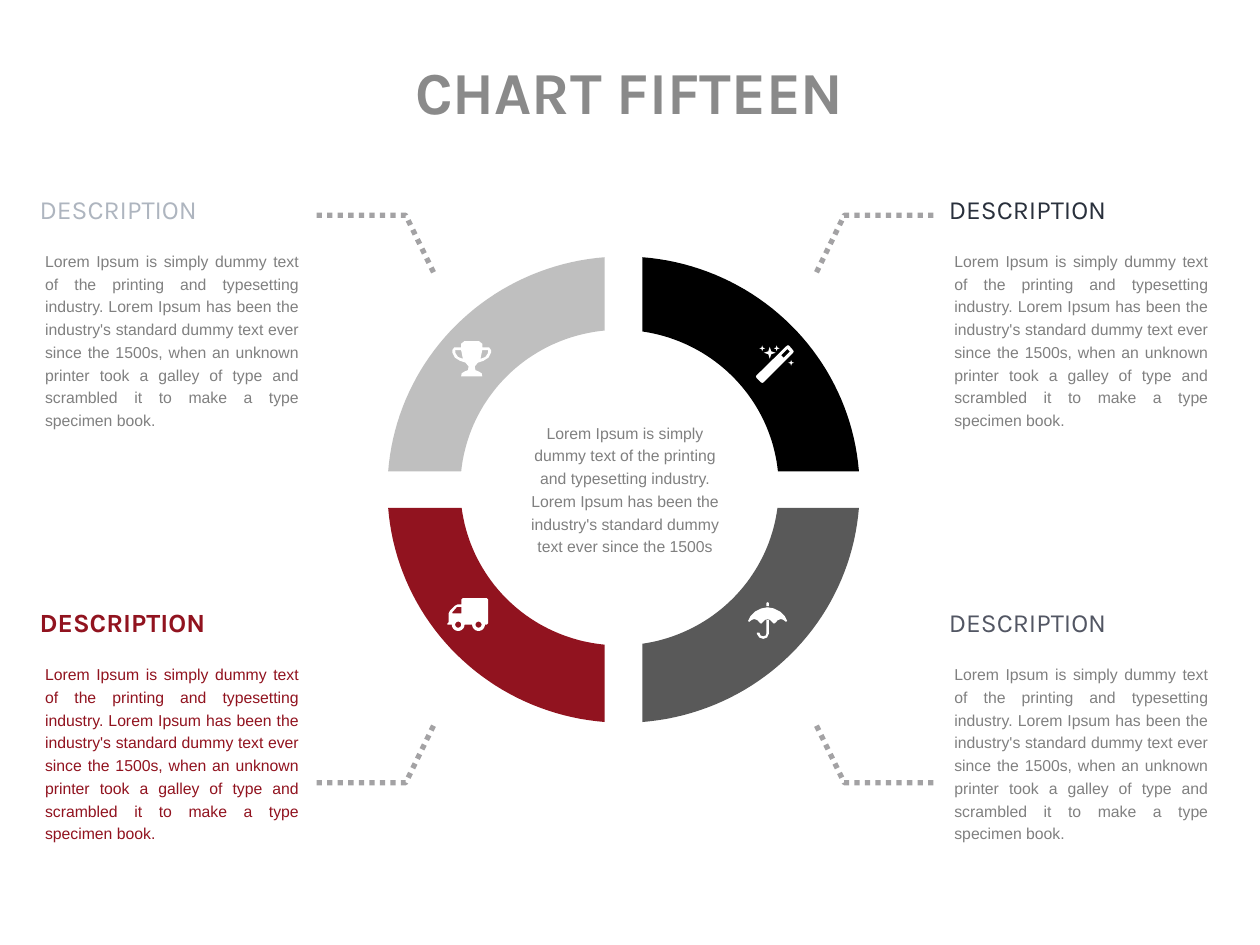
from math import acos, asin, cos, pi, sin

from pptx import Presentation
from pptx.dml.color import RGBColor
from pptx.enum.dml import MSO_LINE
from pptx.enum.text import MSO_ANCHOR, PP_ALIGN
from pptx.util import Cm, Pt

DOTS = MSO_LINE.ROUND_DOT
LEFT, MID, FULL = PP_ALIGN.LEFT, PP_ALIGN.CENTER, PP_ALIGN.JUSTIFY
TOP, CENTRE = MSO_ANCHOR.TOP, MSO_ANCHOR.MIDDLE

COLORS = {
    "title": "8A8A8A", "body": "808080", "dots": "A3A2A4", "icon": "FFFFFF",
    "silver": "BFBFBF", "black": "000000", "red": "91131F", "gray": "595959",
    "mist": "AEB5BF", "navy": "29303C", "slate": "525663",
}
INTRO = ("Lorem Ipsum is simply dummy text of the printing and typesetting "
         "industry. Lorem Ipsum has been the industry's standard dummy text "
         "ever since the 1500s")
STORY = INTRO + (", when an unknown printer took a galley of type and "
                 "scrambled it to make a type specimen book.")


def rgb(name):
    return RGBColor.from_string(COLORS[name])


def add_text(shapes, box, text, size, color, font="Arial", bold=False,
             align=LEFT, anchor=TOP, inset=0, lines=1.0, before=0):
    frame = shapes.add_textbox(*map(Cm, box)).text_frame
    frame.word_wrap = True
    frame.vertical_anchor = anchor
    frame.margin_left = frame.margin_right = Cm(inset)
    frame.margin_top = frame.margin_bottom = Cm(inset)
    frame.text = text
    para = frame.paragraphs[0]
    para.alignment = align
    para.line_spacing = lines
    para.space_before = Pt(before)
    face = para.runs[0].font
    face.name, face.size, face.bold = font, Pt(size), bold
    face.color.rgb = rgb(color)


def add_path(shapes, loops, closed=True):
    """Build one freeform from lists of points in centimetres."""
    pen = None
    for loop in loops:
        start, *rest = [(Cm(x), Cm(y)) for x, y in loop]
        if pen is None:
            pen = shapes.build_freeform(*start)
        else:
            pen.move_to(*start)
        pen.add_line_segments(rest, close=closed)
    shape = pen.convert_to_shape()
    shape.shadow.inherit = False
    return shape


def add_solid(shapes, loops, color):
    shape = add_path(shapes, loops)
    shape.fill.solid()
    shape.fill.fore_color.rgb = rgb(color)
    shape.line.fill.background()


def add_leader(shapes, hub, side, level):
    """Draw a dotted elbow; side and level are -1 or 1 from the hub."""
    steps = [(3.86, 4.57), (4.42, 5.72), (6.23, 5.72)]
    points = [(hub[0] + side * x, hub[1] + level * y) for x, y in steps]
    shape = add_path(shapes, [points], closed=False)
    shape.fill.background()
    shape.line.color.rgb = rgb("dots")
    shape.line.width = Pt(3)
    shape.line.dash_style = DOTS


def add_note(shapes, left, top, head, body, bold):
    add_text(shapes, (left, top, 4.22, 0.86), "DESCRIPTION", 15, head,
             "Karla", bold, anchor=CENTRE, lines=0.8)
    add_text(shapes, (left + 0.01, top + 1.06, 5.31, 3.99), STORY, 9, body,
             align=FULL, inset=0.1, lines=1.2, before=5)


def arc(oval, cut, side, level, count=40):
    """Points on a quarter oval, from its level cut to its upright cut."""
    x, y, wide, high = oval
    first = asin(level * (cut[1] - y) / high)
    last = acos(side * (cut[0] - x) / wide)
    turns = [first + (last - first) * i / count for i in range(count + 1)]
    return [(x + side * wide * cos(t), y + level * high * sin(t))
            for t in turns]


def add_quarter(shapes, hub, side, level, color):
    x, y = hub
    cut = (x + side * 0.38, y + level * 0.37)
    outer = arc((x, y, 4.76, 4.7), cut, side, level)
    inner = arc((x - 0.08, y - 0.04, 3.21, 3.18), cut, side, level)
    add_solid(shapes, [outer + inner[::-1]], color)


def add_icon(shapes, box, grid, loops):
    """Fit outlines drawn on a grid into a box; inner outlines are holes."""
    left, top, wide, high = box
    add_solid(shapes, [[(left + x * wide / grid[0], top + y * high / grid[1])
                        for x, y in loop] for loop in loops], "icon")


def mirror(half, axis=15.5):
    return ([(axis + x, y) for x, y in half]
            + [(axis - x, y) for x, y in reversed(half)])


def disc(x, y, size, turn=2 * pi, count=20):
    return [(x + size * cos(turn * i / count), y + size * sin(turn * i / count))
            for i in range(count + 1)]


def star(x, y, size):
    return [(x + cos(i * pi / 4) * size * (0.35 if i % 2 else 1),
             y + sin(i * pi / 4) * size * (0.35 if i % 2 else 1))
            for i in range(8)]


def add_cup(shapes, box):
    bowl = mirror([(0, 0), (6, 0), (8.5, 2), (8.5, 5), (14, 5), (15.5, 7),
                   (15.5, 9), (13.5, 13), (9.5, 15.5), (5, 17), (2.5, 20),
                   (3, 23), (5.5, 24), (8, 25.5), (8.5, 28), (0, 28)])
    grip = [(8.5, 7), (13.2, 7), (13, 9.5), (11, 12.5), (7, 14)]
    ears = [[(15.5 + side * x, y) for x, y in grip] for side in (-1, 1)]
    add_icon(shapes, box, (31, 28), [bowl, *ears])


def add_wand(shapes, box):
    stick = [(24.5, 0.5), (25.5, 0), (26.5, 0.5), (29.5, 4), (30, 5),
             (29.5, 6), (6, 29.5), (5, 30), (4, 29.5), (0.5, 26),
             (0, 25), (0.5, 24)]
    tip = [(22, 10), (27, 5), (25, 3), (20, 8)]
    stars = [star(11, 6, 4.7), star(5, 2.5, 2.3), star(16.5, 2.5, 2.3),
             star(28, 14, 2.3)]
    add_icon(shapes, box, (30, 30), [stick, tip, *stars])


def add_truck(shapes, box):
    front, back = (8.5, 21), (24.5, 21)
    shell = [(0, 21), (0, 20), (1, 19), (1, 12), (2, 10), (6, 6), (8, 5),
             (11, 5), (11, 1), (12, 0), (31, 0), (32, 1), (32, 20),
             (31, 21), *disc(*back, 5, pi), *disc(*front, 5, pi)]
    glass = [(4, 12), (11, 12), (11, 7), (7.5, 7), (4, 11)]
    add_icon(shapes, box, (32, 26),
             [shell, glass, disc(*front, 2.4), disc(*back, 2.4)])


def add_brolly(shapes, box):
    roof = mirror([(0, 4), (5, 5), (10, 7.5), (13.5, 11), (15.5, 15),
                   (14.5, 15.5), (12.5, 14), (10.5, 13.3), (8, 14.3),
                   (6, 16.5), (5, 17), (4, 16), (2, 14), (0, 13.3)])
    tip = mirror([(0, 0), (1, 0.6), (1, 3.2)])
    hook = [(14.5, 14), (16.5, 14), (16.5, 25), (15, 28), (12, 29), (9, 28),
            (7, 25), (7, 24), (9, 24), (10, 26.3), (12, 27), (14, 26.3),
            (14.5, 25)]
    add_icon(shapes, box, (31, 29), [roof, tip, hook])


def main():
    deck = Presentation()
    deck.slide_width, deck.slide_height = Cm(25.4), Cm(19.05)
    shapes = deck.slides.add_slide(deck.slide_layouts[6]).shapes

    parts = [
        (-1, -1, "silver", "mist", "body", add_cup, (9.12, 6.88, 0.78, 0.71)),
        (1, -1, "black", "navy", "body", add_wand, (15.24, 6.96, 0.76, 0.76)),
        (-1, 1, "red", "red", "red", add_truck, (9.02, 12.06, 0.82, 0.66)),
        (1, 1, "gray", "slate", "body", add_brolly, (15.08, 12.14, 0.79, 0.74)),
    ]
    for side, level, fill, head, body, draw, box in parts:
        add_leader(shapes, (12.6, 10.06), side, level)
        add_note(shapes, 0.8 if side < 0 else 19.13,
                 3.84 if level < 0 else 12.17, head, body, fill == "red")
        add_quarter(shapes, (12.57, 9.87), side, level, fill)
        draw(shapes, box)

    add_text(shapes, (10.49, 8.41, 4.22, 3.4), INTRO, 9, "body",
             align=MID, inset=0.05, lines=1.2, before=5)
    add_text(shapes, (5.31, 1.07, 14.76, 1.7), "CHART FIFTEEN", 34, "title",
             "Karla", True, MID, inset=0.05, before=5)
    deck.save("out.pptx")


if __name__ == "__main__":
    main()
